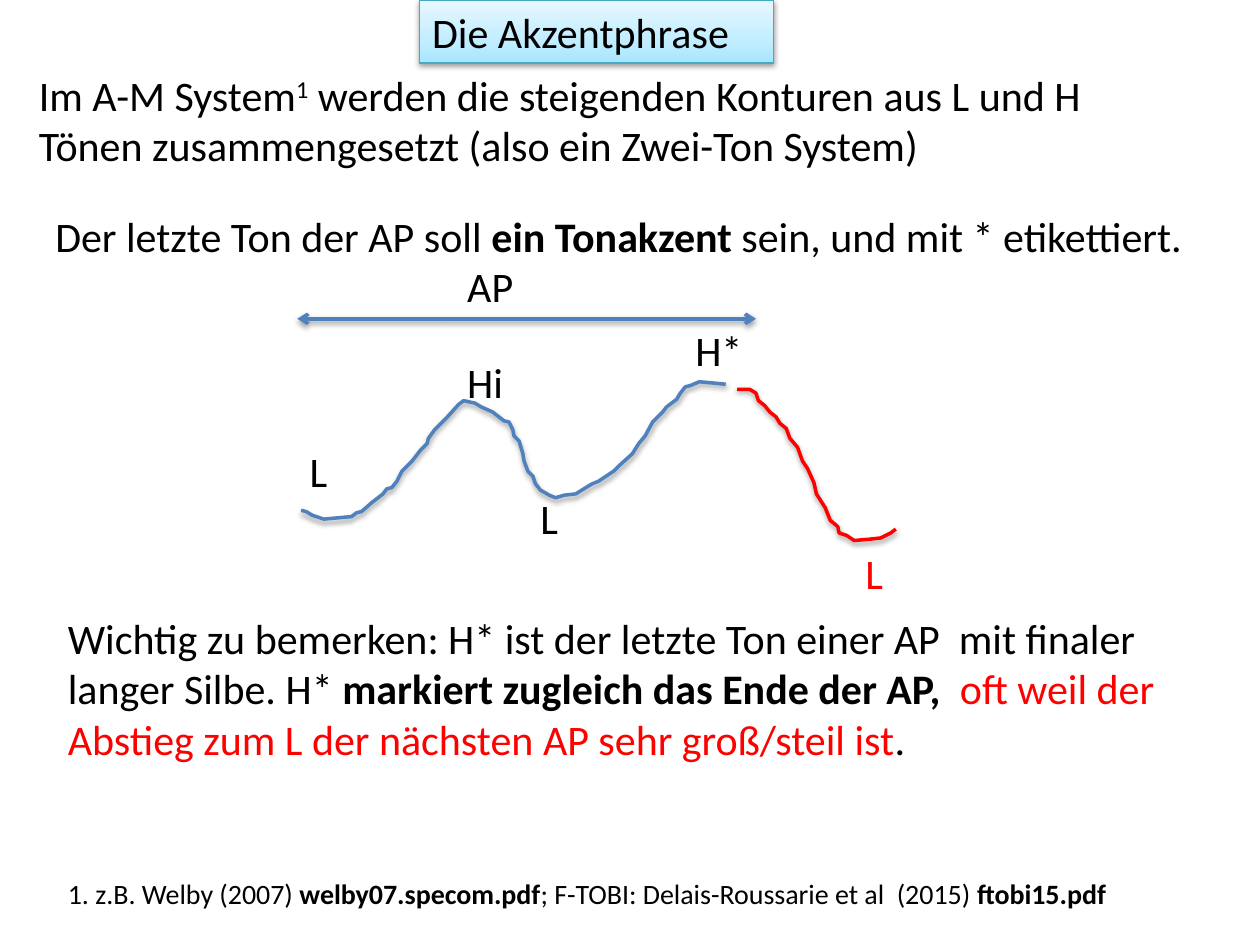
from copy import deepcopy
from dataclasses import dataclass

from lxml.etree import SubElement
from pptx import Presentation
from pptx.dml.color import RGBColor
from pptx.enum.shapes import MSO_CONNECTOR
from pptx.enum.text import MSO_ANCHOR, MSO_AUTO_SIZE, PP_ALIGN
from pptx.oxml.ns import qn
from pptx.util import Inches, Pt

BLACK = RGBColor(0x00, 0x00, 0x00)
RED = RGBColor(0xFF, 0x00, 0x00)
BLUE = RGBColor(0x4F, 0x81, 0xBD)
TEAL = RGBColor(0x46, 0xAA, 0xC5)
TITLE_STOPS = (
    (0, RGBColor(0xA7, 0xE6, 0xFF)),
    (0.35, RGBColor(0xC1, 0xED, 0xFF)),
    (1, RGBColor(0xE7, 0xF8, 0xFF)),
)


@dataclass(frozen=True)
class Run:
    text: str
    bold: bool = False
    color: RGBColor = BLACK
    superscript: bool = False


@dataclass(frozen=True)
class Label:
    left: float
    top: float
    width: float
    height: float
    runs: tuple[Run, ...]
    size: int = 24
    wrap: bool = True


@dataclass(frozen=True)
class Contour:
    color: RGBColor
    points: tuple[tuple[int, int], ...]


def tone(left: float, top: float, width: float, text: str, color: RGBColor = BLACK) -> Label:
    return Label(left, top, width, 0.5, (Run(text, color=color),), wrap=False)


LABELS = (
    Label(0.21, 0.5, 8.87, 0.91, (
        Run("Im A-M System"),
        Run("1", superscript=True),
        Run(" werden die steigenden Konturen aus L und H Tönen "
            "zusammengesetzt (also ein Zwei-Ton System)"),
    )),
    Label(0.34, 1.62, 10.08, 0.5, (
        Run("Der letzte Ton der AP soll "),
        Run("ein Tonakzent ", bold=True),
        Run("sein, und mit * etikettiert."),
    )),
    Label(0.44, 4.81, 9.17, 1.31, (
        Run("Wichtig zu bemerken: H* ist der letzte Ton einer AP  mit finaler "
            "langer Silbe. H* "),
        Run("markiert zugleich das Ende der AP,  ", bold=True),
        Run("oft weil der Abstieg zum L der nächsten AP sehr groß/steil ist", color=RED),
        Run("."),
    )),
    Label(0.44, 6.91, 9.56, 0.37, (
        Run("1. z.B. Welby (2007) "),
        Run("welby07.specom.pdf", bold=True),
        Run("; F-TOBI: Delais-Roussarie et al  (2015) "),
        Run("ftobi15.pdf", bold=True),
    ), size=16),
    Label(3.61, 2.02, 0.85, 0.5, (Run("AP"),)),
    tone(2.36, 3.49, 0.34, "L"),
    tone(3.61, 2.78, 0.49, "Hi"),
    tone(4.19, 3.86, 0.34, "L"),
    tone(5.42, 2.53, 0.58, "H*"),
    tone(6.77, 4.3, 0.34, "L", RED),
)

CONTOURS = (
    Contour(BLUE, (
        (239, 405), (243, 406), (248, 409), (257, 412), (279, 410), (283, 407),
        (287, 406), (295, 399), (304, 392), (307, 388), (311, 387), (315, 382),
        (319, 374), (327, 366), (334, 357), (339, 352), (340, 348), (345, 341),
        (355, 331), (364, 321), (368, 318), (377, 320), (382, 323), (391, 327),
        (400, 334), (404, 335), (407, 341), (408, 346), (412, 350), (415, 360),
        (416, 366), (419, 374), (423, 378), (425, 384), (429, 389), (436, 393),
        (441, 395), (448, 393), (457, 392), (465, 387), (470, 384), (475, 382),
        (487, 374), (491, 370), (502, 360), (507, 352), (512, 346), (518, 335),
        (526, 327), (529, 323), (537, 317), (540, 312), (544, 307), (548, 306),
        (555, 303), (566, 304), (576, 305),
    )),
    Contour(RED, (
        (585, 309), (595, 309), (600, 312), (602, 318), (607, 322), (611, 327),
        (616, 331), (619, 336), (624, 340), (627, 348), (633, 355), (637, 366),
        (641, 372), (646, 383), (648, 392), (655, 403), (659, 413), (665, 418),
        (666, 423), (672, 425), (678, 429), (690, 428), (699, 427), (707, 423),
        (711, 420),
    )),
)


def add_shadow(shape) -> None:
    effects = SubElement(shape._element.spPr, qn("a:effectLst"))
    shadow = SubElement(effects, qn("a:outerShdw"), blurRad="40000", dist="20000",
                        dir="5400000", rotWithShape="0")
    color = SubElement(shadow, qn("a:srgbClr"), val=str(BLACK))
    SubElement(color, qn("a:alpha"), val="38000")


def format_run(r, size: int, bold: bool, color: RGBColor) -> None:
    r.font.name = "Calibri"
    r.font.size = Pt(size)
    r.font.bold = bold
    r.font.color.rgb = color


def add_label(s, label: Label) -> None:
    box = s.shapes.add_textbox(Inches(label.left), Inches(label.top),
                               Inches(label.width), Inches(label.height))
    tf = box.text_frame
    tf.word_wrap = label.wrap
    tf.auto_size = MSO_AUTO_SIZE.SHAPE_TO_FIT_TEXT
    p = tf.paragraphs[0]
    for run in label.runs:
        r = p.add_run()
        r.text = run.text
        format_run(r, label.size, run.bold, run.color)
        if run.superscript:
            r._r.get_or_add_rPr().set("baseline", "30000")


def add_contour(s, contour: Contour) -> None:
    start, *rest = contour.points
    builder = s.shapes.build_freeform(*start, scale=Inches(0.01))
    builder.add_line_segments(rest, close=False)
    sp = builder.convert_to_shape()
    sp.fill.background()
    sp.line.color.rgb = contour.color
    sp.line.width = Pt(2)
    add_shadow(sp)


def add_span_arrow(s, left: float, right: float, y: float) -> None:
    arrow = s.shapes.add_connector(MSO_CONNECTOR.STRAIGHT, Inches(left), Inches(y),
                                   Inches(right), Inches(y))
    arrow.line.color.rgb = BLUE
    arrow.line.width = Pt(2)
    ln = arrow.line._get_or_add_ln()
    for end in ("a:headEnd", "a:tailEnd"):
        SubElement(ln, qn(end), type="arrow")
    add_shadow(arrow)


def format_title(title) -> None:
    title.left, title.top = Inches(3.33), Inches(0)
    title.width, title.height = Inches(2.81), Inches(0.5)
    title.fill.gradient()
    title.fill.gradient_angle = 90
    gs_list = title._element.spPr.find(qn("a:gradFill")).find(qn("a:gsLst"))
    gs_list.append(deepcopy(gs_list[-1]))
    for stop, (position, color) in zip(title.fill.gradient_stops, TITLE_STOPS):
        stop.position = position
        stop.color.rgb = color
    title.line.color.rgb = TEAL
    title.line.width = Pt(0.75)
    add_shadow(title)
    tf = title.text_frame
    tf.text = "Die Akzentphrase"
    tf.word_wrap = True
    tf.auto_size = MSO_AUTO_SIZE.NONE
    tf.vertical_anchor = MSO_ANCHOR.TOP
    p = tf.paragraphs[0]
    p.alignment = PP_ALIGN.LEFT
    format_run(p.runs[0], 24, False, BLACK)


def main() -> None:
    prs = Presentation()
    prs.slide_width, prs.slide_height = Inches(10), Inches(7.5)
    s = prs.slides.add_slide(prs.slide_layouts[5])
    format_title(s.shapes.title)
    for contour in CONTOURS:
        add_contour(s, contour)
    add_span_arrow(s, 2.36, 6, 2.53)
    for label in LABELS:
        add_label(s, label)
    prs.save("out.pptx")


if __name__ == "__main__":
    main()
